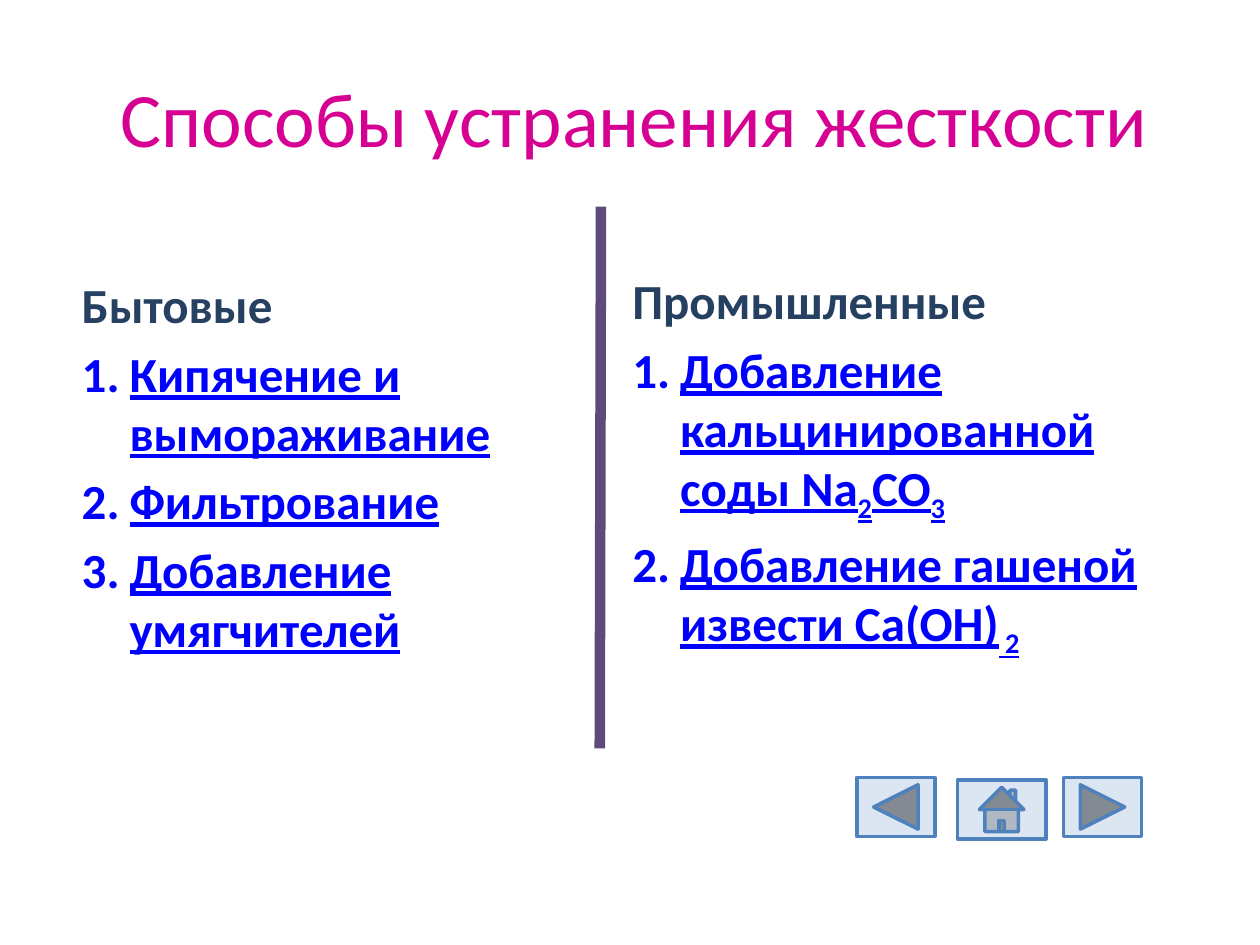
"""Build a slide on the ways to remove water hardness."""
import lxml.etree
import pptx
import pptx.dml.color
import pptx.enum.shapes
import pptx.enum.text
import pptx.oxml.ns
import pptx.util

Inches = pptx.util.Inches
Pt = pptx.util.Pt
MSO_SHAPE = pptx.enum.shapes.MSO_SHAPE

FONT = "Calibri"
MAGENTA = "D60093"
NAVY = "254061"
LINK_BLUE = "0000FF"
PURPLE = "604A7B"
PALE_BLUE = "DCE6F2"
BLUE = "4F81BD"

HOUSEHOLD = [
    [("Кипячение и вымораживание", False)],
    [("Фильтрование", False)],
    [("Добавление умягчителей", False)],
]
INDUSTRIAL = [
    [("Добавление кальцинированной соды Na", False), ("2", True), ("CO", False), ("3", True)],
    [("Добавление гашеной извести Ca(OH)", False), (" 2", True)],
]
BUTTONS = [
    (MSO_SHAPE.ACTION_BUTTON_BACK_OR_PREVIOUS, 6.8, 6.17, 0.62),
    (MSO_SHAPE.ACTION_BUTTON_HOME, 7.6, 6.19, 0.7),
    (MSO_SHAPE.ACTION_BUTTON_FORWARD_OR_NEXT, 8.44, 6.17, 0.62),
]


def rgb(value):
    """Return the colour for a hex string."""
    return pptx.dml.color.RGBColor.from_string(value)


def add_run(paragraph, text, size, color, bold=False, underline=None, subscript=False):
    """Add one formatted run to a paragraph."""
    run = paragraph.add_run()
    run.text = text
    run.font.name = FONT
    run.font.size = Pt(size)
    run.font.bold = bold
    run.font.underline = underline
    run.font.color.rgb = rgb(color)
    if subscript:
        run._r.get_or_add_rPr().set("baseline", "-25000")


def number_paragraph(paragraph):
    """Give a paragraph automatic numbering with a hanging indent."""
    properties = paragraph._p.get_or_add_pPr()
    properties.set("marL", str(Inches(0.38)))
    properties.set("indent", str(-Inches(0.38)))
    numbering = lxml.etree.SubElement(properties, pptx.oxml.ns.qn("a:buAutoNum"))
    numbering.set("type", "arabicPeriod")


def set_title(slide, text):
    """Place and fill the title placeholder."""
    title = slide.shapes.title
    title.left, title.top = Inches(0.7), Inches(0.3)
    title.width, title.height = Inches(8.67), Inches(1.25)
    title.text_frame.vertical_anchor = pptx.enum.text.MSO_ANCHOR.MIDDLE
    paragraph = title.text_frame.paragraphs[0]
    paragraph.alignment = pptx.enum.text.PP_ALIGN.CENTER
    add_run(paragraph, text, 44, MAGENTA)


def add_methods(slide, left, top, width, height, heading, methods):
    """Add a heading followed by a numbered list of methods."""
    column = slide.shapes.add_textbox(Inches(left), Inches(top), Inches(width), Inches(height))
    frame = column.text_frame
    frame.word_wrap = True
    add_run(frame.paragraphs[0], heading, 28, NAVY, bold=True)
    for method in methods:
        paragraph = frame.add_paragraph()
        paragraph.space_before = Pt(5.6)
        number_paragraph(paragraph)
        for text, subscript in method:
            add_run(paragraph, text, 28, LINK_BLUE, True, True, subscript)


def add_divider(slide):
    """Add the line between the two columns."""
    divider = slide.shapes.add_connector(
        pptx.enum.shapes.MSO_CONNECTOR.STRAIGHT,
        Inches(4.77), Inches(1.64), Inches(4.76), Inches(5.94))
    divider.line.color.rgb = rgb(PURPLE)
    divider.line.width = Pt(6)
    lxml.etree.SubElement(divider._element.spPr, pptx.oxml.ns.qn("a:effectLst"))


def add_button(slide, kind, left, top, width):
    """Add a navigation button."""
    button = slide.shapes.add_shape(kind, Inches(left), Inches(top), Inches(width), Inches(0.47))
    button.shadow.inherit = False
    button.fill.solid()
    button.fill.fore_color.rgb = rgb(PALE_BLUE)
    button.line.color.rgb = rgb(BLUE)
    button.line.width = Pt(2)


def main():
    """Build and save the slide."""
    deck = pptx.Presentation()
    deck.slide_width, deck.slide_height = Inches(10), Inches(7.5)
    slide = deck.slides.add_slide(deck.slide_layouts[5])
    set_title(slide, "Способы устранения жесткости")
    add_methods(slide, 0.55, 2.13, 4.22, 4.32, "Бытовые", HOUSEHOLD)
    add_methods(slide, 4.92, 2.1, 4.53, 4.95, "Промышленные", INDUSTRIAL)
    add_divider(slide)
    for button in BUTTONS:
        add_button(slide, *button)
    deck.save("out.pptx")


if __name__ == "__main__":
    main()
